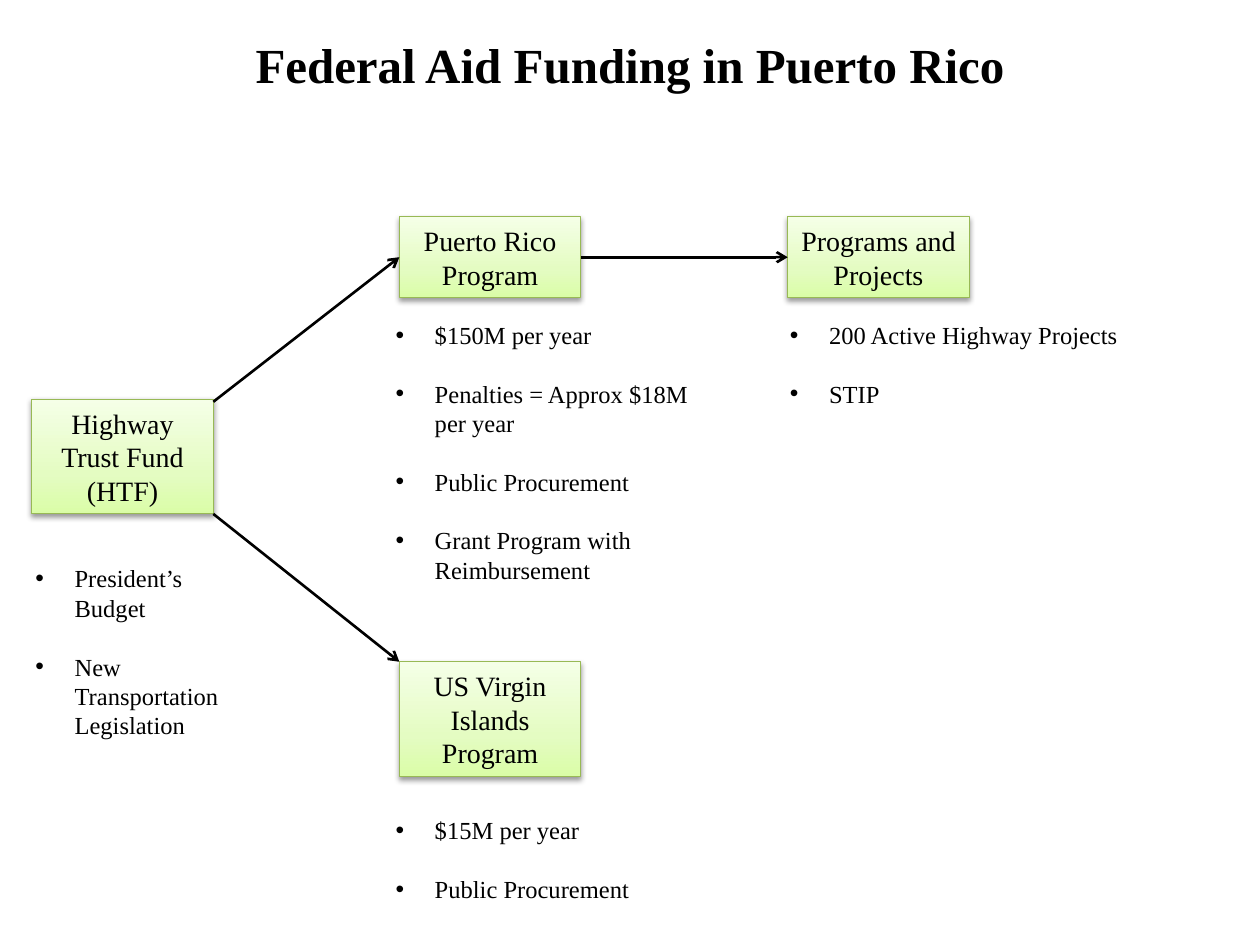
import copy

import pptx
import pptx.dml.color
import pptx.enum.dml
import pptx.enum.shapes
import pptx.enum.text
import pptx.oxml
import pptx.oxml.ns
import pptx.util

Cm = pptx.util.Cm
Pt = pptx.util.Pt
Align = pptx.enum.text.PP_ALIGN
Anchor = pptx.enum.text.MSO_ANCHOR

BOX_WIDTH = 3.66
LEFT, MIDDLE, RIGHT = 0.64, 8.05, 15.88
TWO_LINES, THREE_LINES = 1.63, 2.31
TOP_ROW, FUND_ROW, ISLANDS_ROW = 4.37, 8.05, 13.34


def color(value):
    return pptx.dml.color.RGBColor.from_string(value)


def add_xml(parent, tag, **attributes):
    child = pptx.oxml.parse_xml(f"<{tag} {pptx.oxml.ns.nsdecls('a')}/>")
    for name, value in attributes.items():
        child.set(name, str(value))
    parent.append(child)
    return child


def write(frame, lines, size, font="Times New Roman", fill="000000", bold=False,
          align=Align.CENTER, anchor=Anchor.TOP, gap=0, bullet=False):
    """Fill a text frame with one paragraph per line."""
    frame.word_wrap = True
    frame.auto_size = pptx.enum.text.MSO_AUTO_SIZE.NONE
    frame.vertical_anchor = anchor
    for number, line in enumerate(lines):
        para = frame.add_paragraph() if number else frame.paragraphs[0]
        para.alignment = align
        para.space_before = Pt(0)
        para.space_after = Pt(gap)
        span = para.add_run()
        span.text = line
        span.font.name = font
        span.font.size = Pt(size)
        span.font.bold = bold
        span.font.color.rgb = color(fill)
        if bullet:
            properties = para._p.get_or_add_pPr()
            properties.set("marL", str(Cm(0.79)))
            properties.set("indent", str(-Cm(0.79)))
            add_xml(properties, "a:buFont", typeface="Arial")
            add_xml(properties, "a:buChar", char="•")


class Diagram:
    gradient = [(0, "DAFDA7"), (0.35, "E4FCC2"), (1, "F5FFE7")]
    outline = "98B955"
    ink = "000000"

    def __init__(self, page):
        self.page = page
        self.bodies = iter(list(page.placeholders)[1:])

    def place(self, shape, left, top, width, height):
        shape.left, shape.top = Cm(left), Cm(top)
        shape.width, shape.height = Cm(width), Cm(height)

    def title(self, text):
        title = self.page.shapes.title
        self.place(title, 1.27, 0, 22.86, 2.59)
        write(title.text_frame, [text], 28, bold=True, anchor=Anchor.MIDDLE)

    def bullets(self, left, top, width, height, lines):
        """Use the next free body placeholder for a bulleted list."""
        body = next(self.bodies)
        self.place(body, left, top, width, height)
        write(body.text_frame, lines, 14, align=Align.LEFT, gap=16.75, bullet=True)

    def box(self, left, top, height, text):
        box = self.page.shapes.add_shape(
            pptx.enum.shapes.MSO_SHAPE.RECTANGLE,
            Cm(left), Cm(top), Cm(BOX_WIDTH), Cm(height))
        box.line.color.rgb = color(self.outline)
        box.line.width = Pt(0.75)
        self.shade(box)
        self.drop_shadow(box)
        write(box.text_frame, [text], 16, anchor=Anchor.MIDDLE)

    def shade(self, box):
        box.fill.gradient()
        box.fill.gradient_angle = 90
        first = box.fill.gradient_stops[0]._gs
        first.addnext(copy.deepcopy(first))
        for stop, (position, value) in zip(box.fill.gradient_stops, self.gradient):
            stop.position = position
            stop.color.rgb = color(value)

    def drop_shadow(self, box):
        box.shadow.inherit = False
        effects = box._element.spPr.find(pptx.oxml.ns.qn("a:effectLst"))
        shadow = add_xml(effects, "a:outerShdw", blurRad=Pt(3.1), dist=Pt(1.6),
                         dir=90 * 60000, rotWithShape=0)
        tint = add_xml(shadow, "a:srgbClr", val=self.ink)
        add_xml(tint, "a:alpha", val=38000)

    def arrow(self, x1, y1, x2, y2):
        arrow = self.page.shapes.add_connector(
            pptx.enum.shapes.MSO_CONNECTOR.STRAIGHT, Cm(x1), Cm(y1), Cm(x2), Cm(y2))
        arrow.line.color.rgb = color(self.ink)
        arrow.line.width = Pt(1.5)
        add_xml(arrow.line._get_or_add_ln(), "a:tailEnd", type="arrow")
        add_xml(arrow._element.spPr, "a:effectLst")


def main():
    deck = pptx.Presentation()
    deck.slide_width, deck.slide_height = Cm(25.4), Cm(19.05)
    # The comparison layout offers a title and four bodies.
    diagram = Diagram(deck.slides.add_slide(deck.slide_layouts[4]))
    diagram.title("Federal Aid Funding in Puerto Rico")

    diagram.box(LEFT, FUND_ROW, THREE_LINES, "Highway Trust Fund (HTF)")
    diagram.box(MIDDLE, TOP_ROW, TWO_LINES, "Puerto Rico Program")
    diagram.box(MIDDLE, ISLANDS_ROW, THREE_LINES, "US Virgin Islands Program")
    diagram.box(RIGHT, TOP_ROW, TWO_LINES, "Programs and Projects")

    fund_edge = LEFT + BOX_WIDTH
    top_center = TOP_ROW + TWO_LINES / 2
    diagram.arrow(fund_edge, FUND_ROW + 0.05, MIDDLE, top_center)
    diagram.arrow(fund_edge, FUND_ROW + THREE_LINES, MIDDLE, ISLANDS_ROW)
    diagram.arrow(MIDDLE + BOX_WIDTH, top_center, RIGHT, top_center)

    diagram.bullets(0.46, 11.23, 4.62, 3.84, [
        "President’s Budget", "New Transportation Legislation"])
    diagram.bullets(7.72, 6.32, 6.88, 5.64, [
        "$150M per year", "Penalties = Approx $18M per year",
        "Public Procurement", "Grant Program with Reimbursement"])
    diagram.bullets(7.72, 16.31, 5.38, 2.06, ["$15M per year", "Public Procurement"])
    diagram.bullets(15.67, 6.32, 7.82, 2.06, ["200 Active Highway Projects", "STIP"])
    deck.save("out.pptx")


if __name__ == "__main__":
    main()
